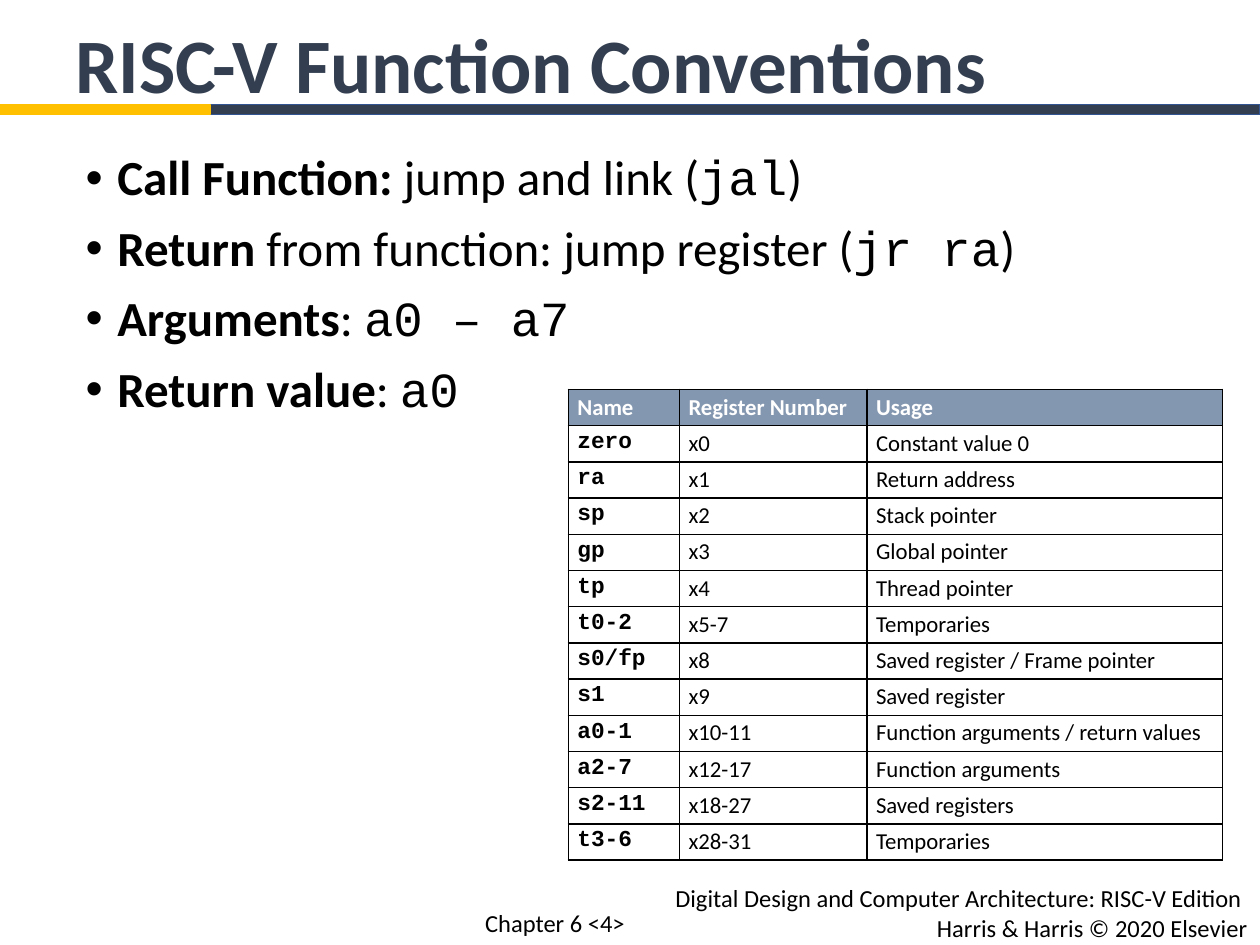
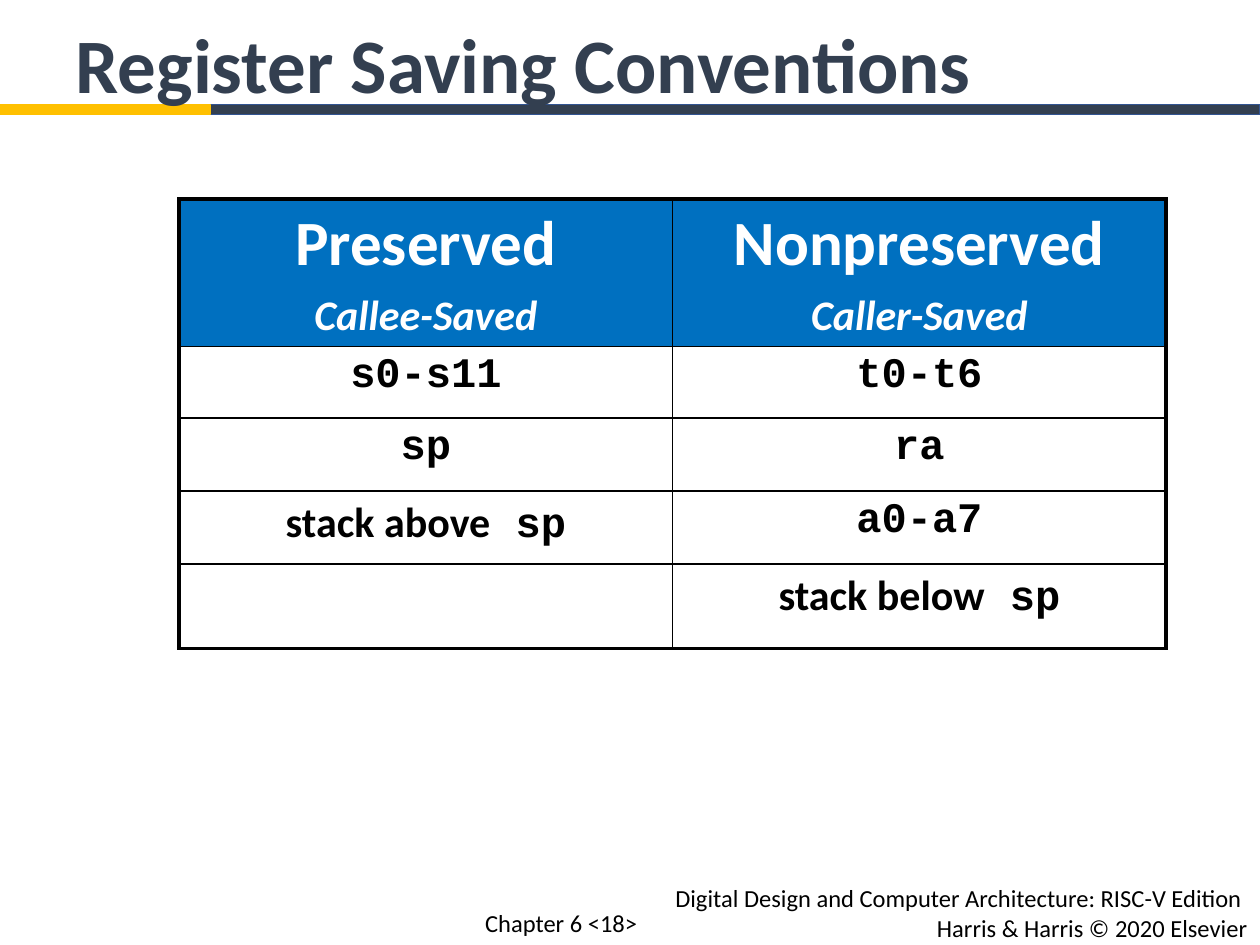
"""Build two slides on RISC-V function calls and register saving."""
import lxml.etree
import pptx
import pptx.dml.color
import pptx.enum.shapes
import pptx.enum.text
import pptx.oxml.ns
import pptx.util

Cm = pptx.util.Cm
Pt = pptx.util.Pt
ALIGN = pptx.enum.text.PP_ALIGN
ANCHOR = pptx.enum.text.MSO_ANCHOR

COLORS = {
    "white": "FFFFFF",
    "black": "000000",
    "navy": "333F50",
    "navy_edge": "325491",
    "gold": "FFC000",
    "slate": "8497B0",
    "blue": "0070C0",
}
TEXT_FONT = "Calibri"
CODE_FONT = "Courier New"

CONVENTIONS = [
    [("Call Function:", "bold"), (" jump and link (", "plain"), ("jal", "code"), (")", "plain")],
    [("Return", "bold"), (" from function: jump register (", "plain"), ("jr ra", "code"), (")", "plain")],
    [("Arguments", "bold"), (": ", "plain"), ("a0 – a7", "code")],
    [("Return value", "bold"), (": ", "plain"), ("a0", "code")],
]
REGISTERS = [
    ("Name", "Register Number", "Usage"),
    ("zero", "x0", "Constant value 0"),
    ("ra", "x1", "Return address"),
    ("sp", "x2", "Stack pointer"),
    ("gp", "x3", "Global pointer"),
    ("tp", "x4", "Thread pointer"),
    ("t0-2", "x5-7", "Temporaries"),
    ("s0/fp", "x8", "Saved register / Frame pointer"),
    ("s1", "x9", "Saved register"),
    ("a0-1", "x10-11", "Function arguments / return values"),
    ("a2-7", "x12-17", "Function arguments"),
    ("s2-11", "x18-27", "Saved registers"),
    ("t3-6", "x28-31", "Temporaries"),
]
SAVING_HEADS = [("Preserved", "Callee-Saved"), ("Nonpreserved", "Caller-Saved")]
SAVING_ROWS = [
    ([("s0-s11", CODE_FONT)], [("t0-t6", CODE_FONT)]),
    ([("sp", CODE_FONT)], [("ra", CODE_FONT)]),
    ([("stack above", TEXT_FONT), (" sp", CODE_FONT)], [("a0-a7", CODE_FONT)]),
    ([], [("stack below", TEXT_FONT), (" sp", CODE_FONT)]),
]


def color(name):
    return pptx.dml.color.RGBColor.from_string(COLORS[name])


def add_span(para, text, size, tint="black", font=TEXT_FONT, bold=False, italic=False):
    span = para.add_run()
    span.text = text
    span.font.size = Pt(size)
    span.font.name = font
    span.font.bold = bold
    span.font.italic = italic
    span.font.color.rgb = color(tint)


def next_para(frame, index):
    return frame.add_paragraph() if index else frame.paragraphs[0]


def place(shape, left, top, width, height):
    shape.left, shape.top = Cm(left), Cm(top)
    shape.width, shape.height = Cm(width), Cm(height)


def set_indent(para, left, first):
    properties = para._p.get_or_add_pPr()
    properties.set("marL", str(Cm(left)))
    properties.set("indent", str(Cm(first)))


def add_band(page, left, top, width, height, fill, edge):
    band = page.shapes.add_shape(
        pptx.enum.shapes.MSO_SHAPE.RECTANGLE, Cm(left), Cm(top), Cm(width), Cm(height))
    band.shadow.inherit = False
    band.fill.solid()
    band.fill.fore_color.rgb = color(fill)
    band.line.color.rgb = color(edge)
    band.line.width = Pt(1)
    return band


def add_note(page, left, top, width, height, lines, align):
    box = page.shapes.add_textbox(Cm(left), Cm(top), Cm(width), Cm(height))
    box.text_frame.word_wrap = True
    for index, line in enumerate(lines):
        para = next_para(box.text_frame, index)
        para.alignment = align
        add_span(para, line, 14)
    return box


def furnish_master(deck, page):
    """Draw the shared bands and credit, then move them to the slide master."""
    shared = [
        add_band(page, 0, 16.31, 25.4, 2.74, "white", "white"),
        add_note(page, 9.53, 17.68, 15.87, 1.45,
                 ["Digital Design and Computer Architecture: RISC-V Edition ",
                  "Harris & Harris © 2020 Elsevier"], ALIGN.RIGHT),
        add_band(page, 4.24, 2.11, 21.16, 0.2, "navy", "navy_edge"),
        add_band(page, 0, 2.11, 4.24, 0.2, "gold", "gold"),
    ]
    for shape in shared:
        deck.slide_master.shapes._spTree.append(shape._element)


def add_page(deck, layout_name, title, number):
    page = deck.slides.add_slide(deck.slide_layouts.get_by_name(layout_name))
    place(page.shapes.title, 0, 0.2, 22.02, 2.13)
    frame = page.shapes.title.text_frame
    frame.auto_size = pptx.enum.text.MSO_AUTO_SIZE.NONE
    para = frame.paragraphs[0]
    set_indent(para, 1.27, 0)
    para.alignment = ALIGN.LEFT
    add_span(para, title, 44, "navy", bold=True)
    add_note(page, 9.53, 18.19, 4.01, 0.86, [f"Chapter 6 <{number}>"], ALIGN.LEFT)
    return page


def fill_body(page, lines):
    body = page.placeholders[1]
    place(body, 1.47, 2.97, 22.43, 14.4)
    body.text_frame.auto_size = pptx.enum.text.MSO_AUTO_SIZE.NONE
    for index, line in enumerate(lines):
        para = next_para(body.text_frame, index)
        set_indent(para, 0.64, -0.64)
        para.line_spacing = 0.9
        para.space_before = Pt(10 if index else 0)
        for text, style in line:
            add_span(para, text, 28, font=CODE_FONT if style == "code" else TEXT_FONT,
                     bold=style == "bold")


def add_grid(page, left, top, widths, heights):
    frame = page.shapes.add_table(
        len(heights), len(widths), Cm(left), Cm(top), Cm(sum(widths)), Cm(sum(heights)))
    table = frame.table
    table.horz_banding = False
    for column, width in zip(table.columns, widths):
        column.width = Cm(width)
    for row, height in zip(table.rows, heights):
        row.height = Cm(height)
    return table


def style_cell(table, row, column, head_fill, outer=1):
    """Rule and fill one cell, with the outer width on the table's rim."""
    cell = table.cell(row, column)
    properties = cell._tc.get_or_add_tcPr()
    rims = {"lnL": column == 0, "lnR": column == len(table.columns) - 1,
            "lnT": row == 0, "lnB": row == len(table.rows) - 1}
    for tag, on_rim in rims.items():
        line = lxml.etree.SubElement(properties, pptx.oxml.ns.qn(f"a:{tag}"),
                                     w=str(Pt(outer if on_rim else 1)))
        solid = lxml.etree.SubElement(line, pptx.oxml.ns.qn("a:solidFill"))
        lxml.etree.SubElement(solid, pptx.oxml.ns.qn("a:srgbClr"), val=COLORS["black"])
    if row == 0:
        cell.fill.solid()
        cell.fill.fore_color.rgb = color(head_fill)
    else:
        cell.fill.background()
    return cell


def add_register_table(page):
    table = add_grid(page, 11.46, 7.85, [2.24, 3.78, 7.16], [0.73] * len(REGISTERS))
    for row, texts in enumerate(REGISTERS):
        for column, text in enumerate(texts):
            cell = style_cell(table, row, column, "slate")
            cell.margin_left = cell.margin_right = Cm(0.18)
            cell.margin_top = cell.margin_bottom = Cm(0.08)
            is_head, is_name = row == 0, column == 0
            add_span(cell.text_frame.paragraphs[0], text, 13,
                     "white" if is_head else "black",
                     CODE_FONT if is_name and not is_head else TEXT_FONT,
                     bold=is_head or is_name)


def add_saving_table(page):
    table = add_grid(page, 3.61, 4.01, [9.95, 9.95], [2.97, 1.45, 1.47, 1.47, 1.7])
    for column, (kind, saver) in enumerate(SAVING_HEADS):
        cell = style_cell(table, 0, column, "blue", 2.25)
        cell.vertical_anchor = ANCHOR.MIDDLE
        for index, (text, size) in enumerate([(kind, 36), (saver, 24)]):
            para = next_para(cell.text_frame, index)
            para.alignment = ALIGN.CENTER
            para.space_before = Pt(4.8 * index)
            add_span(para, text, size, "white", bold=True, italic=index == 1)
    for row, entries in enumerate(SAVING_ROWS, start=1):
        for column, spans in enumerate(entries):
            cell = style_cell(table, row, column, "blue", 2.25)
            para = cell.text_frame.paragraphs[0]
            para.alignment = ALIGN.CENTER
            for text, font in spans:
                add_span(para, text, 24, font=font, bold=True)


def main():
    deck = pptx.Presentation()
    deck.slide_width, deck.slide_height = Cm(25.4), Cm(19.05)

    page = add_page(deck, "Title and Content", "RISC-V Function Conventions", 4)
    furnish_master(deck, page)
    fill_body(page, CONVENTIONS)
    add_register_table(page)

    page = add_page(deck, "Title Only", "Register Saving Conventions", 18)
    add_saving_table(page)

    deck.save("out.pptx")


if __name__ == "__main__":
    main()
